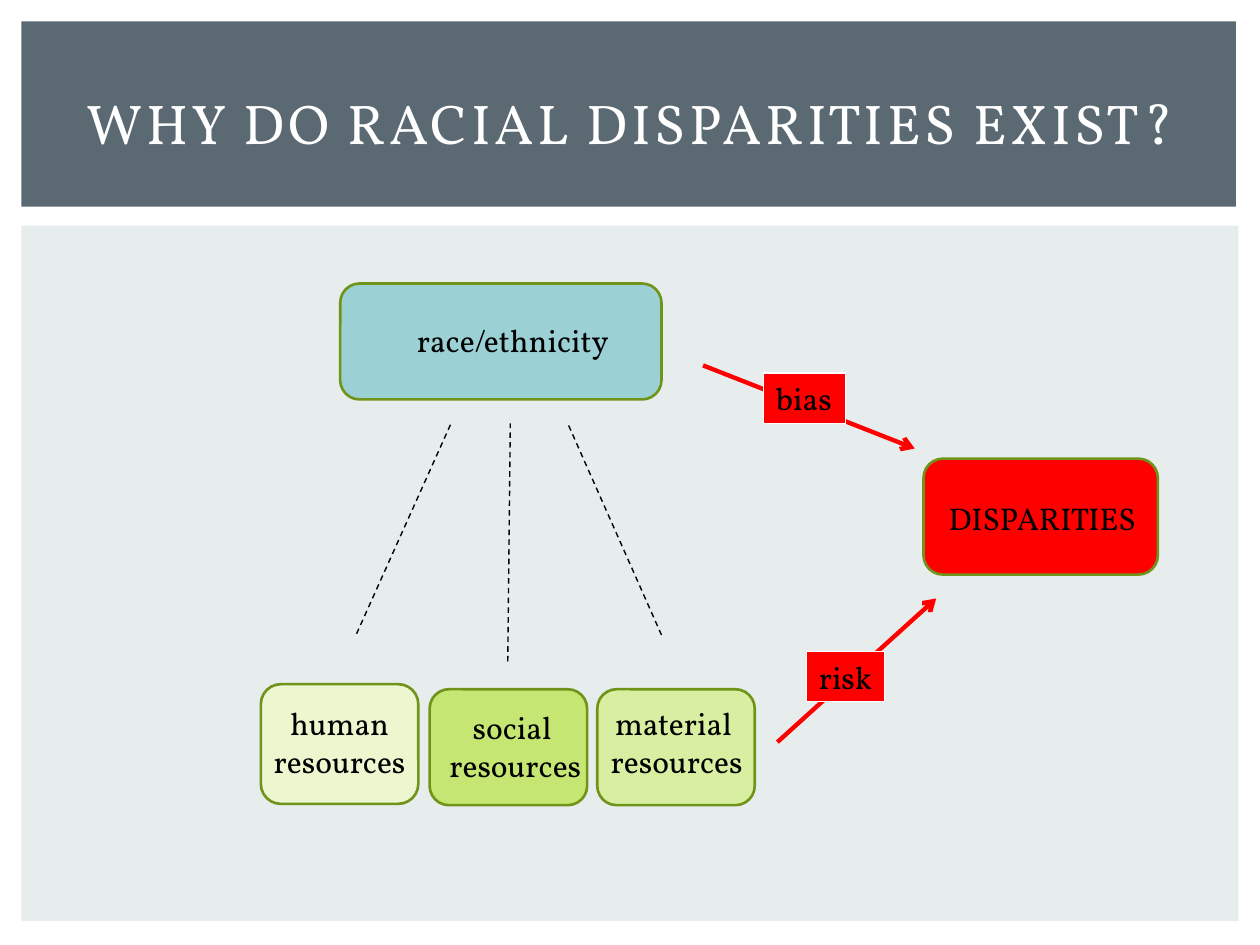
from dataclasses import dataclass

from lxml.etree import SubElement
from pptx import Presentation
from pptx.dml.color import RGBColor
from pptx.enum.dml import MSO_LINE
from pptx.enum.shapes import MSO_CONNECTOR, MSO_SHAPE
from pptx.enum.text import MSO_ANCHOR, MSO_AUTO_SIZE, PP_ALIGN
from pptx.oxml.ns import qn
from pptx.util import Inches, Pt


@dataclass(frozen=True)
class Theme:
    font: str = "Vollkorn"
    title_size: float = 32
    label_size: float = 18
    title_spacing: float = 2
    panel: str = "E7ECED"
    banner: str = "5B6973"
    outline: str = "70931A"
    race: str = "9BD0D5"
    human: str = "ECF7D0"
    social: str = "C5E672"
    material: str = "D8EEA1"
    alert: str = "FF0000"
    light: str = "FFFFFF"
    dark: str = "000000"


THEME = Theme()

TITLE = "WHY DO RACIAL DISPARITIES EXIST?"
TITLE_AREA = (0.42, 0.39, 9.17, 1.15)

BACKGROUND = [
    ((0.17, 1.79, 9.66, 5.52), THEME.panel),
    ((0.17, 0.17, 9.64, 1.47), THEME.banner),
]

# box area, fill, label lines, label area, label alignment, label wraps
FACTORS = [
    ((4.74, 5.47, 1.25, 0.92), THEME.material, ["material ", "resources"],
     (4.74, 5.54, 1.26, 0.71), PP_ALIGN.CENTER, False),
    ((3.41, 5.47, 1.25, 0.92), THEME.social, ["social ", "resources"],
     (3.46, 5.57, 1.26, 0.71), PP_ALIGN.CENTER, False),
    ((7.33, 3.64, 1.86, 0.92), THEME.alert, ["DISPARITIES"],
     (7.43, 3.91, 1.73, 0.4), PP_ALIGN.LEFT, False),
    ((2.07, 5.43, 1.25, 0.95), THEME.human, ["human resources"],
     (2.07, 5.54, 1.25, 0.71), PP_ALIGN.CENTER, True),
    ((2.7, 2.25, 2.55, 0.92), THEME.race, ["race/ethnicity"],
     (3.21, 2.5, 1.72, 0.4), PP_ALIGN.LEFT, False),
]

# start, end, label, label area
PATHWAYS = [
    ((5.58, 2.9), (7.26, 3.56), "bias", (6.06, 2.96, 0.65, 0.4)),
    ((6.17, 5.89), (7.43, 4.75), "risk", (6.4, 5.17, 0.62, 0.4)),
]

RESOURCE_LINKS = [
    ((2.83, 5.03), (3.58, 3.36)),
    ((4.03, 5.25), (4.05, 3.36)),
    ((5.25, 5.04), (4.51, 3.37)),
]


def rgb(color):
    return RGBColor.from_string(color)


def add_box(slide, preset, area, fill, outline=None, width=0):
    box = slide.shapes.add_shape(preset, *map(Inches, area))
    box.shadow.inherit = False
    box.fill.solid()
    box.fill.fore_color.rgb = rgb(fill)
    if outline:
        box.line.color.rgb = rgb(outline)
        box.line.width = Pt(width)
    else:
        box.line.fill.background()
    return box


def write(shape, lines, align, wrap=False, size=THEME.label_size,
          color=THEME.dark, anchor=MSO_ANCHOR.TOP):
    frame = shape.text_frame
    frame.word_wrap = wrap
    frame.auto_size = MSO_AUTO_SIZE.NONE
    frame.vertical_anchor = anchor
    frame.text = "\n".join(lines)
    for paragraph in frame.paragraphs:
        paragraph.alignment = align
        paragraph.font.name = THEME.font
        paragraph.font.size = Pt(size)
        paragraph.font.color.rgb = rgb(color)
    return frame


def add_line(slide, start, end, color, width):
    line = slide.shapes.add_connector(
        MSO_CONNECTOR.STRAIGHT, *map(Inches, start + end))
    line.line.color.rgb = rgb(color)
    line.line.width = Pt(width)
    SubElement(line._element.spPr, qn("a:effectLst"))
    return line


def add_title(slide):
    title = slide.shapes.add_textbox(*map(Inches, TITLE_AREA))
    frame = write(title, [TITLE], PP_ALIGN.CENTER, True, THEME.title_size,
                  THEME.light, MSO_ANCHOR.MIDDLE)
    run = frame.paragraphs[0].runs[0]
    run.font._element.set("spc", str(int(THEME.title_spacing * 100)))


def main():
    deck = Presentation()
    deck.slide_width, deck.slide_height = Inches(10), Inches(7.5)
    slide = deck.slides.add_slide(deck.slide_layouts[6])

    for area, fill in BACKGROUND:
        add_box(slide, MSO_SHAPE.RECTANGLE, area, fill)
    for area, fill, *_ in FACTORS:
        add_box(slide, MSO_SHAPE.ROUNDED_RECTANGLE, area, fill,
                THEME.outline, 1.5)
    add_title(slide)
    for _, _, lines, area, align, wrap in FACTORS:
        label = slide.shapes.add_textbox(*map(Inches, area))
        write(label, lines, align, wrap)

    for start, end, *_ in PATHWAYS:
        arrow = add_line(slide, start, end, THEME.alert, 2.5)
        SubElement(arrow.line._get_or_add_ln(), qn("a:tailEnd"), type="arrow")
    for start, end in RESOURCE_LINKS:
        link = add_line(slide, start, end, THEME.dark, 0.79)
        link.line.dash_style = MSO_LINE.DASH
    for _, _, name, area in PATHWAYS:
        tag = add_box(slide, MSO_SHAPE.RECTANGLE, area, THEME.alert,
                      THEME.light, 0.75)
        write(tag, [name], PP_ALIGN.LEFT)

    deck.save("out.pptx")


if __name__ == "__main__":
    main()
